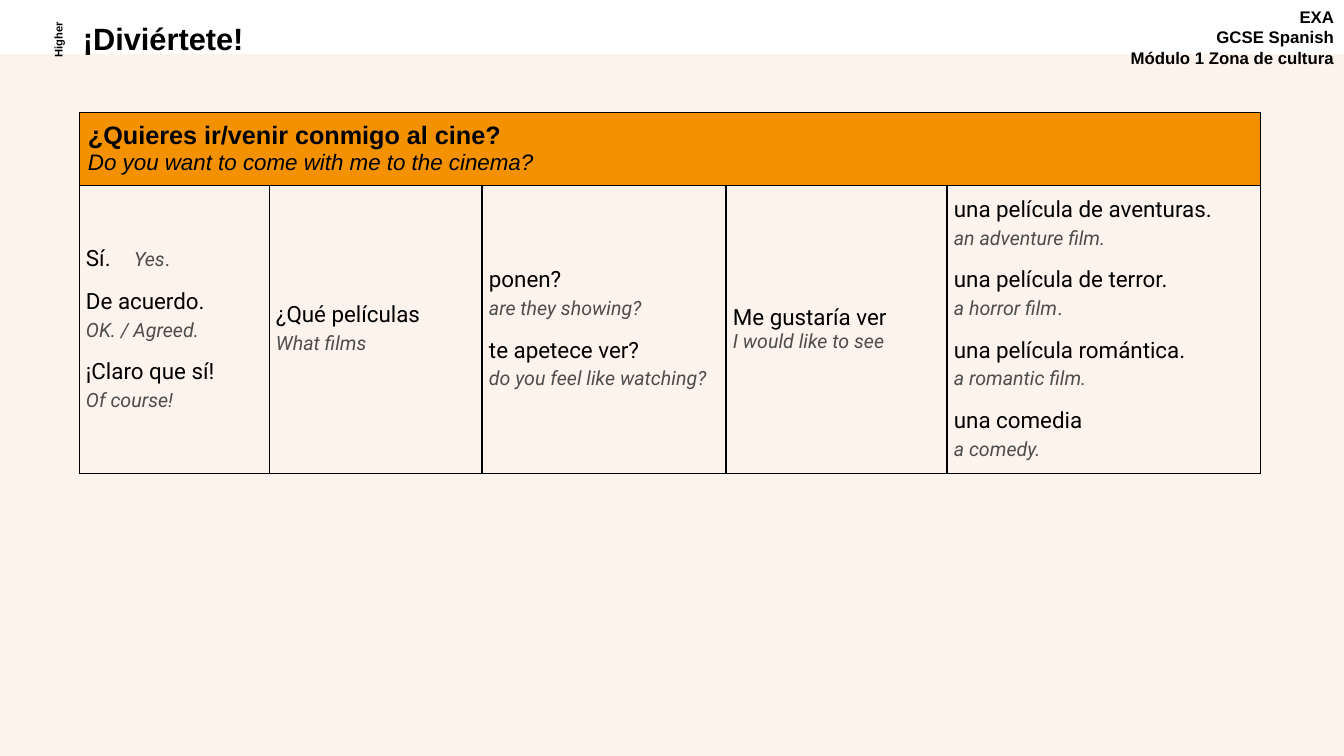
from lxml.etree import SubElement
from pptx import Presentation
from pptx.dml.color import RGBColor
from pptx.enum.shapes import MSO_SHAPE
from pptx.enum.text import MSO_ANCHOR, PP_ALIGN
from pptx.oxml import parse_xml
from pptx.oxml.ns import nsdecls, qn
from pptx.util import Pt

# Content
COURSE = ["EXA", "GCSE Spanish", "Módulo 1 Zona de cultura"]
TITLE = "¡Diviértete!"
LEVEL = "Higher"
QUESTION = ("¿Quieres ir/venir conmigo al cine?",
            "Do you want to come with me to the cinema?")
# Each column: width, space after Spanish, space after English,
# phrases as (Spanish, English, upright ending)
COLUMNS = [
    (190, 3, 12, [("Sí.\t", "Yes", "."),
                  ("De acuerdo.", "OK. / Agreed.", ""),
                  ("¡Claro que sí!", "Of course!", "")]),
    (213, 3, 12, [("¿Qué películas", "What films", "")]),
    (244, 3, 12, [("ponen?", "are they showing?", ""),
                  ("te apetece ver?", "do you feel like watching?", "")]),
    (221, 0, 0, [("Me gustaría ver", "I would like to see", "")]),
    (314, 3, 12, [("una película de aventuras.", "an adventure film.", ""),
                  ("una película de terror.", "a horror film", "."),
                  ("una película romántica.", "a romantic film.", ""),
                  ("una comedia", "a comedy.", "")]),
]
ROW_HEIGHTS = [73, 288]
TABLE_LEFT, TABLE_TOP = 79, 112
BLACK, GREY, CREAM, ORANGE = "000000", "4D4D4C", "FDF3ED", "F39100"
SLIDE_WIDTH, SLIDE_HEIGHT, BAND_TOP = 1344, 756, 54
SCALE = 12192000 / SLIDE_WIDTH


def px(length):
    return round(length * SCALE)


def color(value):
    return RGBColor.from_string(value)


def write(paragraph, text, size=16, font="Arial", ink=BLACK, bold=False, italic=False):
    run = paragraph.add_run()
    run.text = text
    run.font.size, run.font.name = Pt(size), font
    run.font.bold, run.font.italic = bold, italic
    run.font.color.rgb = color(ink)


def next_paragraph(frame):
    first = frame.paragraphs[0]
    return frame.add_paragraph() if first.runs else first


def add_label(box, lines, size, align=PP_ALIGN.LEFT, line_spacing=None):
    label = slide.shapes.add_textbox(*map(px, box))
    label.text_frame.word_wrap = True
    for line in lines:
        paragraph = next_paragraph(label.text_frame)
        paragraph.alignment = align
        paragraph.line_spacing = line_spacing
        write(paragraph, line, size=size, bold=True)
    return label


def add_border(cell, side, width):
    cell._tc.get_or_add_tcPr().append(parse_xml(
        f'<a:ln{side} {nsdecls("a")} w="{Pt(width)}"><a:solidFill>'
        f'<a:srgbClr val="{BLACK}"/></a:solidFill></a:ln{side}>'))


def set_insets(cell, across, down):
    cell.margin_left = cell.margin_right = px(across)
    cell.margin_top = cell.margin_bottom = px(down)
    cell.vertical_anchor = MSO_ANCHOR.MIDDLE


prs = Presentation()
prs.slide_width, prs.slide_height = px(SLIDE_WIDTH), px(SLIDE_HEIGHT)
slide = prs.slides.add_slide(prs.slide_layouts[6])

# Background band
band = slide.shapes.add_shape(MSO_SHAPE.RECTANGLE, 0, px(BAND_TOP),
                              px(SLIDE_WIDTH), px(SLIDE_HEIGHT - BAND_TOP))
band.shadow.inherit = False
band.fill.solid()
band.fill.fore_color.rgb = color(CREAM)
band.line.fill.background()

# Headings
add_label((1052, 2, 292, 78), COURSE, 12, align=PP_ALIGN.RIGHT)
add_label((73, 19, 693, 43), [TITLE], 22, line_spacing=0.9)
level = add_label((18, 29, 79, 22), [LEVEL], 8, align=PP_ALIGN.CENTER)
level.rotation = 270

# Table frame
table = slide.shapes.add_table(
    len(ROW_HEIGHTS), len(COLUMNS), px(TABLE_LEFT), px(TABLE_TOP),
    px(sum(column[0] for column in COLUMNS)), px(sum(ROW_HEIGHTS))).table
table.first_row = table.horz_banding = False
for row, height in zip(table.rows, ROW_HEIGHTS):
    row.height = px(height)
for index, column in enumerate(COLUMNS):
    table.columns[index].width = px(column[0])
    for row in range(len(ROW_HEIGHTS)):
        cell = table.cell(row, index)
        for side, edge in (("L", index), ("R", index + 1), ("T", 0), ("B", 0)):
            add_border(cell, side, 1 if row and edge > 1 else 0.75)
        cell.fill.background()

# Question row
question = table.cell(0, 0)
question.merge(table.cell(0, len(COLUMNS) - 1))
question.fill.solid()
question.fill.fore_color.rgb = color(ORANGE)
set_insets(question, 9, 4)
spanish, english = QUESTION
write(next_paragraph(question.text_frame), spanish, size=18, bold=True)
write(next_paragraph(question.text_frame), english, italic=True)

# Phrase columns
for index, (_, spanish_gap, english_gap, phrases) in enumerate(COLUMNS):
    cell = table.cell(1, index)
    set_insets(cell, 7, 0)
    for spanish, english, ending in phrases:
        paragraph = next_paragraph(cell.text_frame)
        if spanish.endswith("\t"):
            paragraph.space_after = Pt(english_gap)
            tabs = SubElement(paragraph._p.get_or_add_pPr(), qn("a:tabLst"))
            SubElement(tabs, qn("a:tab"), pos=str(px(48)), algn="l")
            write(paragraph, spanish, font="Roboto")
        else:
            paragraph.space_after = Pt(spanish_gap)
            write(paragraph, spanish, font="Roboto")
            paragraph = next_paragraph(cell.text_frame)
            paragraph.space_after = Pt(english_gap)
        write(paragraph, english, size=14, font="Roboto", ink=GREY, italic=True)
        if ending:
            write(paragraph, ending, size=14, font="Roboto", ink=GREY)

prs.save("out.pptx")
